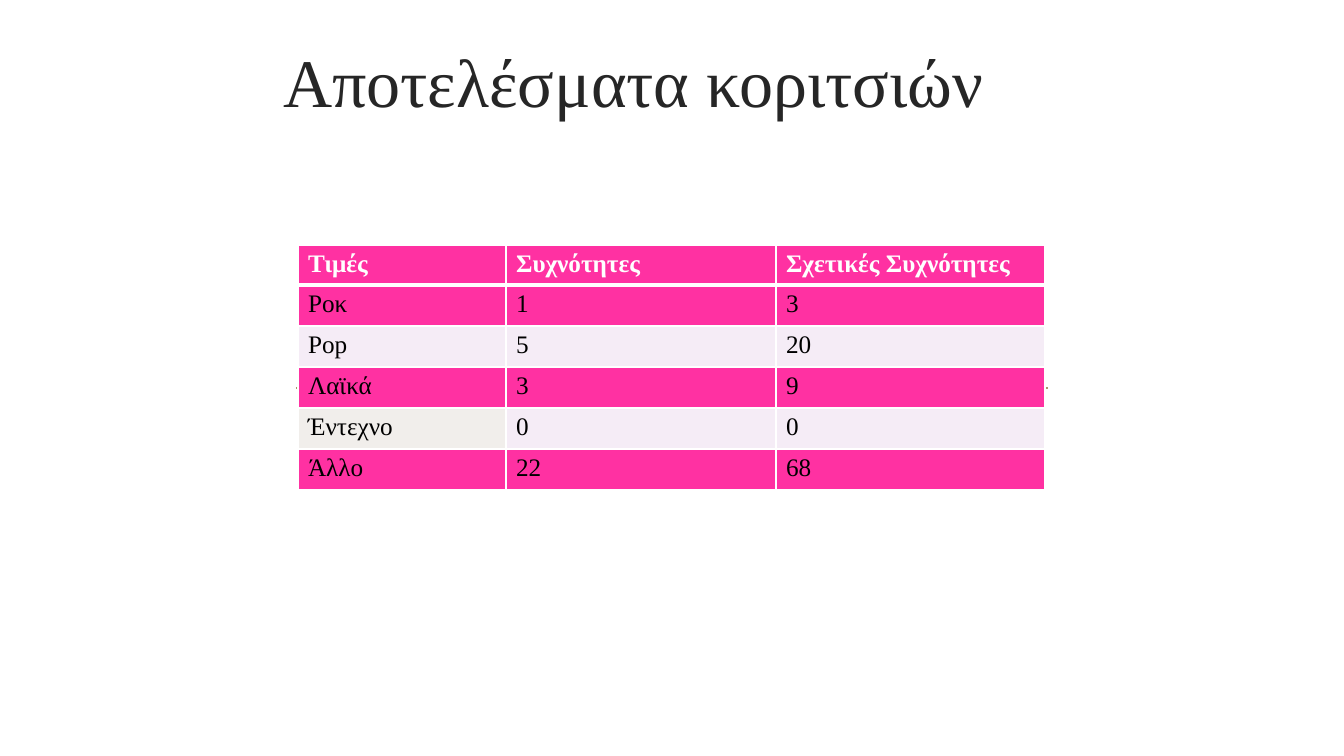
from lxml.etree import SubElement
from pptx import Presentation
from pptx.dml.color import RGBColor
from pptx.enum.shapes import MSO_CONNECTOR
from pptx.enum.text import MSO_ANCHOR, MSO_AUTO_SIZE, PP_ALIGN
from pptx.oxml.ns import qn
from pptx.util import Pt

TITLE = "Αποτελέσματα κοριτσιών "
ROWS = [
    ("Τιμές", "Συχνότητες", "Σχετικές Συχνότητες"),
    ("Ροκ", "1", "3"),
    ("Pop", "5", "20"),
    ("Λαϊκά", "3", "9"),
    ("Έντεχνο", "0", "0"),
    ("Άλλο", "22", "68"),
]
FONT = "Times New Roman"
PINK, PALE, CREAM = "FF31A2", "F5ECF6", "F1EEEB"
WHITE, BLACK, DARK, TAN = "FFFFFF", "000000", "262626", "AB946B"
CREAM_CELL = (4, 0)

TITLE_BOX = (147, 36, 990, 90)
TABLE_LEFT, TABLE_TOP = 298, 245
COLUMN_WIDTHS = (208, 270, 269)
HEADER_HEIGHT, ROW_HEIGHT = 40, 41
RULE_LEFT, RULE_RIGHT, RULE_Y = 296, 1048, 388


def px(length):
    return round(length * 914400 / 100.8)


def color(hex_string):
    return RGBColor.from_string(hex_string)


def write(text_frame, text, size, fill, bold=False, align=PP_ALIGN.LEFT):
    paragraph = text_frame.paragraphs[0]
    paragraph.alignment = align
    run = paragraph.add_run()
    run.text = text
    font = run.font
    font.name, font.size, font.bold = FONT, Pt(size), bold
    font.color.rgb = color(fill)


def set_borders(cell, **widths):
    """Draw white cell borders; widths are points keyed by L, R, T and B."""
    properties = cell._tc.get_or_add_tcPr()
    for position, side in enumerate("LRTB"):
        line = SubElement(properties, qn(f"a:ln{side}"), w=str(Pt(widths.get(side, 1))))
        fill = SubElement(line, qn("a:solidFill"))
        SubElement(fill, qn("a:srgbClr"), val=WHITE)
        properties.insert(position, line)


def add_rule(slide):
    rule = slide.shapes.add_connector(
        MSO_CONNECTOR.STRAIGHT, px(RULE_LEFT), px(RULE_Y), px(RULE_RIGHT), px(RULE_Y))
    rule.line.color.rgb = color(TAN)
    rule.line.width = Pt(1.25)
    SubElement(rule._element.spPr, qn("a:effectLst"))


def add_title(slide):
    title = slide.shapes.title
    title.left, title.top, title.width, title.height = map(px, TITLE_BOX)
    frame = title.text_frame
    frame.auto_size = MSO_AUTO_SIZE.NONE
    frame.vertical_anchor = MSO_ANCHOR.BOTTOM
    write(frame, TITLE, 48.6, DARK, align=PP_ALIGN.CENTER)


def add_results_table(slide):
    height = HEADER_HEIGHT + ROW_HEIGHT * (len(ROWS) - 1)
    table = slide.shapes.add_table(
        len(ROWS), len(COLUMN_WIDTHS), px(TABLE_LEFT), px(TABLE_TOP),
        px(sum(COLUMN_WIDTHS)), px(height)).table
    for column, width in zip(table.columns, COLUMN_WIDTHS):
        column.width = px(width)
    for row_index, values in enumerate(ROWS):
        is_header = row_index == 0
        table.rows[row_index].height = px(HEADER_HEIGHT if is_header else ROW_HEIGHT)
        row_fill = PINK if is_header or row_index % 2 else PALE
        for column_index, value in enumerate(values):
            cell = table.cell(row_index, column_index)
            cell.fill.solid()
            is_cream = (row_index, column_index) == CREAM_CELL
            cell.fill.fore_color.rgb = color(CREAM if is_cream else row_fill)
            set_borders(cell, T=3 if row_index == 1 else 1, B=3 if is_header else 1)
            write(cell.text_frame, value, 18, WHITE if is_header else BLACK, bold=is_header)


def main():
    presentation = Presentation()
    presentation.slide_width, presentation.slide_height = px(1344), px(756)
    slide = presentation.slides.add_slide(presentation.slide_layouts[5])
    add_rule(slide)
    add_title(slide)
    add_results_table(slide)
    presentation.save("out.pptx")


if __name__ == "__main__":
    main()
